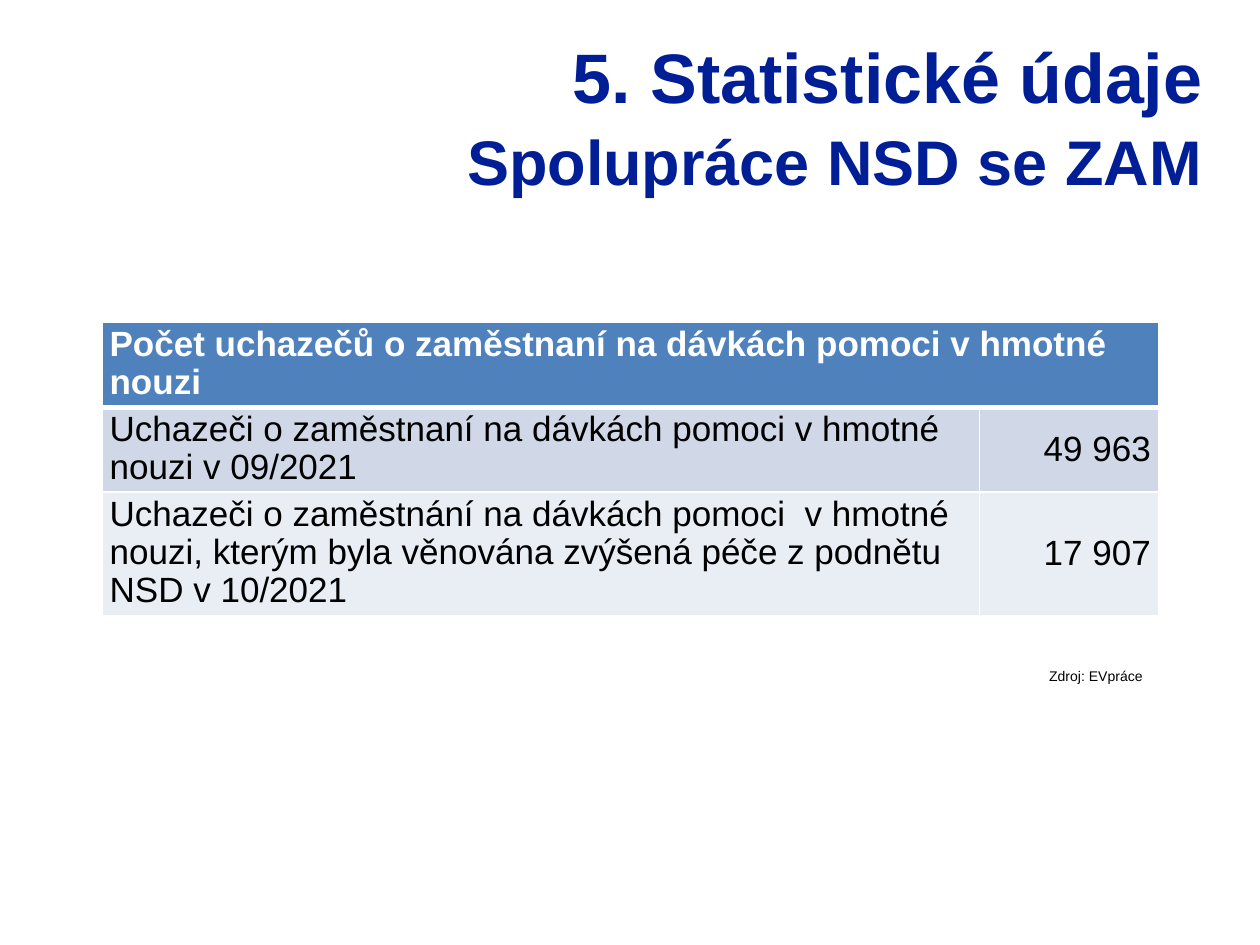
from lxml.etree import SubElement
from pptx import Presentation
from pptx.dml.color import RGBColor
from pptx.enum.text import MSO_ANCHOR, PP_ALIGN
from pptx.oxml.ns import qn
from pptx.util import Cm, Pt

# Content
TITLE = [("5. Statistické údaje", 40), ("Spolupráce NSD se ZAM", 36)]
HEADER = "Počet uchazečů o zaměstnaní na dávkách pomoci v hmotné nouzi"
ROWS = [
    ("Uchazeči o zaměstnaní na dávkách pomoci v hmotné nouzi v 09/2021", "49 963"),
    ("Uchazeči o zaměstnání na dávkách pomoci  v hmotné nouzi, kterým byla "
     "věnována zvýšená péče z podnětu NSD v 10/2021", "17 907"),
]
SOURCE = "Zdroj: EVpráce"

THEME = {
    "font": "Arial", "title": "001E96", "text": "000000", "white": "FFFFFF",
    "header": "4F81BD", "bands": ("D0D8E8", "E9EDF4"),
    "table_size": 20, "source_size": 8,
}
COL_WIDTHS = (17.69, 3.6)
ROW_HEIGHTS = (1.71, 1.71, 2.5)


def add_run(p, text, size, color, bold=False):
    r = p.add_run()
    r.text = text
    r.font.name = THEME["font"]
    r.font.size = Pt(size)
    r.font.bold = bold
    r.font.color.rgb = RGBColor.from_string(color)


def add_box(s, left, top, width, height):
    tf = s.shapes.add_textbox(Cm(left), Cm(top), Cm(width), Cm(height)).text_frame
    tf.word_wrap = True
    return tf


def set_borders(cell, bottom):
    tc_pr = cell._tc.get_or_add_tcPr()
    for side, width in (("L", 1), ("R", 1), ("T", 1), ("B", bottom)):
        ln = SubElement(tc_pr, qn(f"a:ln{side}"), w=str(Pt(width)))
        fill = SubElement(ln, qn("a:solidFill"))
        SubElement(fill, qn("a:srgbClr"), val=THEME["white"])


def style_cell(cell, fill, bottom=1):
    cell.margin_left = cell.margin_right = Cm(0.15)
    cell.margin_top = cell.margin_bottom = Cm(0.08)
    set_borders(cell, bottom)
    cell.fill.solid()
    cell.fill.fore_color.rgb = RGBColor.from_string(fill)


def write_cell(cell, text, color, bold=False):
    p = cell.text_frame.paragraphs[0]
    p.line_spacing = 0.97
    add_run(p, text, THEME["table_size"], color, bold)
    return p


def add_table(s):
    table = s.shapes.add_table(
        len(ROW_HEIGHTS), len(COL_WIDTHS), Cm(2.06), Cm(6.5),
        Cm(sum(COL_WIDTHS)), Cm(sum(ROW_HEIGHTS))).table
    for col, width in zip(table.columns, COL_WIDTHS):
        col.width = Cm(width)
    for row, height in zip(table.rows, ROW_HEIGHTS):
        row.height = Cm(height)

    # Header across both columns
    for cell in table.rows[0].cells:
        style_cell(cell, THEME["header"], bottom=3)
    table.cell(0, 0).merge(table.cell(0, 1))
    write_cell(table.cell(0, 0), HEADER, THEME["white"], bold=True)

    # Labels and counts
    for i, (values, fill) in enumerate(zip(ROWS, THEME["bands"]), 1):
        for j, text in enumerate(values):
            cell = table.cell(i, j)
            style_cell(cell, fill)
            p = write_cell(cell, text, THEME["text"])
            if j == 1:
                p.alignment = PP_ALIGN.RIGHT
                cell.vertical_anchor = MSO_ANCHOR.MIDDLE


def main():
    prs = Presentation()
    prs.slide_width, prs.slide_height = Cm(25.4), Cm(19.05)
    s = prs.slides.add_slide(prs.slide_layouts[6])

    add_table(s)

    # Source note
    tf = add_box(s, 20.9, 13.34, 3, 0.6)
    add_run(tf.paragraphs[0], SOURCE, THEME["source_size"], THEME["text"])

    # Title
    tf = add_box(s, 6.1, 0.53, 18.39, 3.81)
    tf.vertical_anchor = MSO_ANCHOR.MIDDLE
    for i, (text, size) in enumerate(TITLE):
        p = tf.add_paragraph() if i else tf.paragraphs[0]
        p.alignment = PP_ALIGN.RIGHT
        p.line_spacing = 0.9
        if i:
            p.space_before = Pt(7)
        add_run(p, text, size, THEME["title"], bold=True)

    prs.save("out.pptx")


if __name__ == "__main__":
    main()
